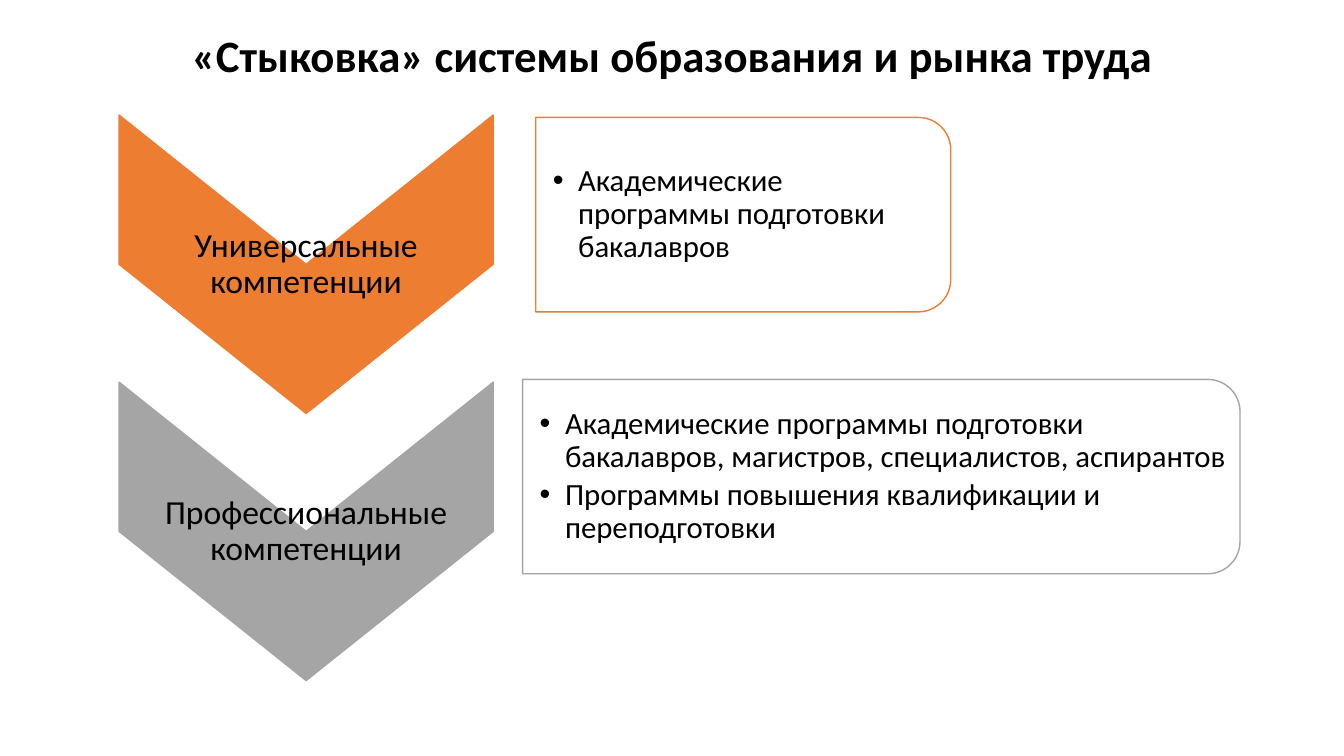
from lxml import etree
from pptx import Presentation
from pptx import util as u
from pptx.dml import color
from pptx.enum import shapes, text
from pptx.oxml import ns

Cm, Pt = u.Cm, u.Pt
COLORS = {"text": "000000", "card": "FFFFFF", "orange": "ED7D31", "gray": "A5A5A5"}
FONT = "Calibri"
CHEVRON_SIZE = (9.43, 7.52)
CARD_HEIGHT = 4.9
TEXT_INSET = 0.05

# Each row: colour, competence, chevron box (left, top), card box (left, top, width), programmes
ROWS = [
    ("orange", "Универсальные компетенции", (3, 2.9), (13.5, 2.96, 10.46),
     ["Академические программы подготовки бакалавров"]),
    ("gray", "Профессиональные компетенции", (3, 9.63), (13.17, 9.56, 18.08),
     ["Академические программы подготовки бакалавров, магистров, специалистов, аспирантов",
      "Программы повышения квалификации и переподготовки"]),
]


def rgb(name):
    return color.RGBColor.from_string(COLORS[name])


def place(shape, left, top, width, height):
    shape.left, shape.top = Cm(left), Cm(top)
    shape.width, shape.height = Cm(width), Cm(height)


def write(shape, lines, size, bold=False, align=text.PP_ALIGN.CENTER,
          after=0, bullet=False, insets=None):
    """Fill a shape with formatted paragraphs; insets are (left, other sides) in cm."""
    frame = shape.text_frame
    frame.word_wrap = True
    frame.auto_size = text.MSO_AUTO_SIZE.NONE
    frame.vertical_anchor = text.MSO_ANCHOR.MIDDLE
    if insets:
        frame.margin_left = Cm(insets[0])
        frame.margin_top = frame.margin_right = frame.margin_bottom = Cm(insets[1])
    frame.text = "\n".join(lines)
    for paragraph in frame.paragraphs:
        paragraph.alignment = align
        paragraph.line_spacing = 0.9
        paragraph.space_before, paragraph.space_after = Pt(0), Pt(after)
        font = paragraph.runs[0].font
        font.name, font.size, font.bold = FONT, Pt(size), bold
        font.color.rgb = rgb("text")
        if bullet:
            properties = paragraph._p.get_or_add_pPr()
            properties.set("marL", str(Cm(0.64)))
            properties.set("indent", str(-Cm(0.64)))
            etree.SubElement(properties, ns.qn("a:buChar")).set("char", "•")


def add_turned_shape(slide, kind, box, fill, line):
    """Add a preset shape turned by 90 degrees so that it covers the given box."""
    left, top, width, height = box
    shift = (width - height) / 2
    shape = slide.shapes.add_shape(kind, Cm(left + shift), Cm(top - shift),
                                   Cm(height), Cm(width))
    shape.rotation = 90
    shape.shadow.inherit = False
    shape.fill.solid()
    shape.fill.fore_color.rgb = rgb(fill)
    shape.line.color.rgb = rgb(line)
    shape.line.width = Pt(1)
    return shape


def add_title(slide, title, box):
    place(slide.shapes.title, *box)
    write(slide.shapes.title, [title], 32, bold=True)


def add_competence(slide, label, tone, box):
    add_turned_shape(slide, shapes.MSO_SHAPE.CHEVRON, box, tone, tone)
    caption = slide.shapes.add_textbox(*map(Cm, box))
    write(caption, [label], 24, after=8.4, insets=(TEXT_INSET, TEXT_INSET))


def add_programmes(slide, placeholder, programmes, tone, box):
    card = add_turned_shape(slide, shapes.MSO_SHAPE.ROUND_2_SAME_RECTANGLE, box, "card", tone)
    # Card fill is 90 % opaque
    fill_color = card._element.spPr.find(ns.qn("a:solidFill"))[0]
    etree.SubElement(fill_color, ns.qn("a:alpha")).set("val", "90000")
    # The list lies in front of its card
    slide.shapes._spTree.append(placeholder._element)
    left, top, width, height = box
    place(placeholder, left, top + 0.24, width - 0.22, height - 0.48)
    write(placeholder, programmes, 22, align=text.PP_ALIGN.LEFT, after=3.3,
          bullet=True, insets=(0.43, TEXT_INSET))


def main():
    presentation = Presentation()
    presentation.slide_width, presentation.slide_height = Cm(33.87), Cm(19.05)
    two_content = presentation.slide_layouts[3]
    slide = presentation.slides.add_slide(two_content)
    lists = [slide.placeholders[1], slide.placeholders[2]]

    add_title(slide, "«Стыковка» системы образования и рынка труда",
              (2.34, 0.51, 29.21, 1.88))
    for placeholder, (tone, label, corner, card, programmes) in zip(lists, ROWS):
        add_competence(slide, label, tone, (*corner, *CHEVRON_SIZE))
        add_programmes(slide, placeholder, programmes, tone, (*card, CARD_HEIGHT))

    presentation.save("out.pptx")


if __name__ == "__main__":
    main()
